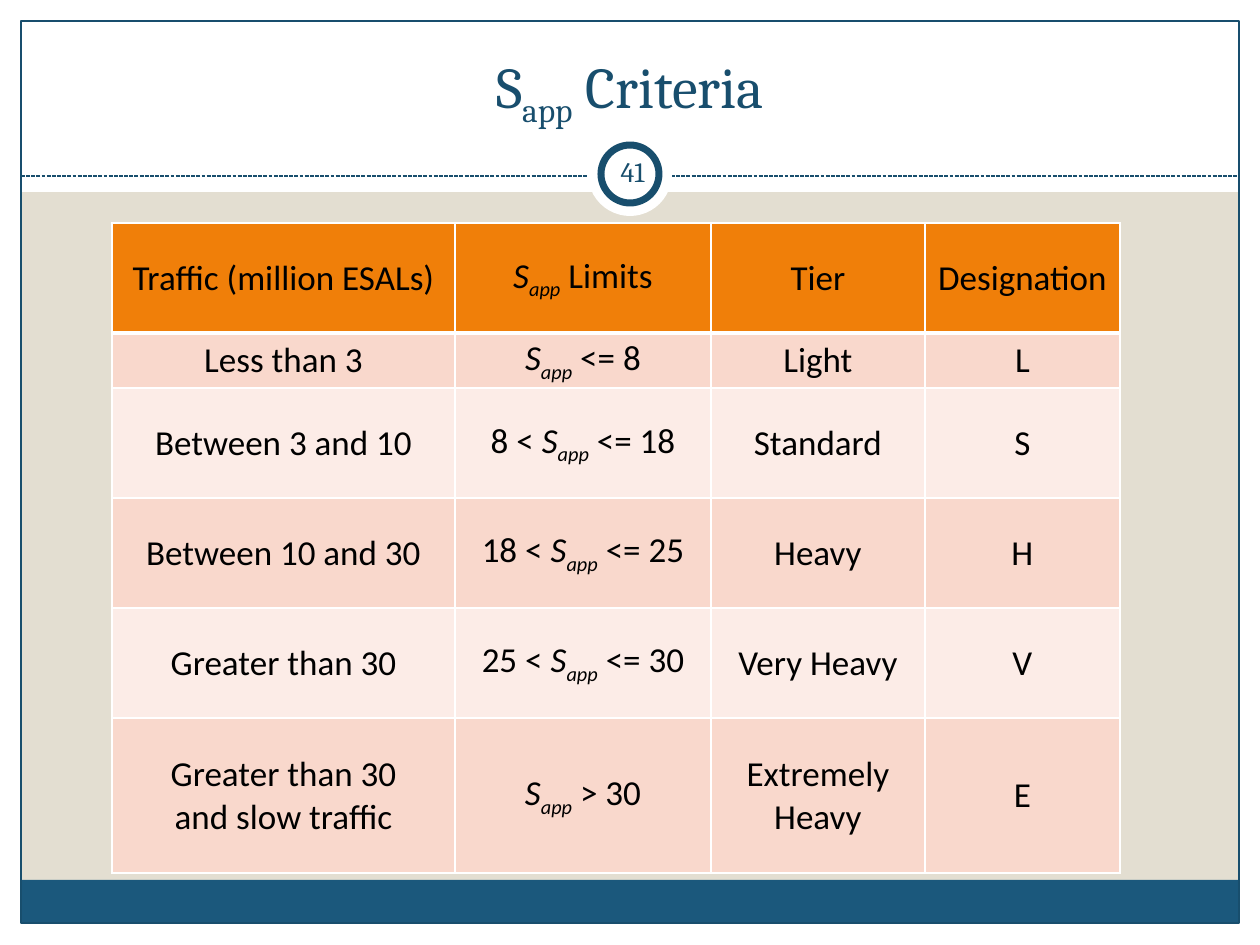
from lxml.etree import SubElement
from pptx import Presentation
from pptx.dml.color import RGBColor
from pptx.enum.dml import MSO_LINE
from pptx.enum.shapes import MSO_CONNECTOR, MSO_SHAPE
from pptx.enum.text import MSO_ANCHOR, PP_ALIGN
from pptx.oxml.ns import qn
from pptx.util import Emu, Pt

PX = 914400 // 126
WIDTH, HEIGHT = 1260, 945
MARGIN = 21
NAVY, BLUE, WHITE, BEIGE = "184E6D", "1B587C", "FFFFFF", "E3DED1"
ORANGE, ROSE, PALE = "F07F09", "F9D8CC", "FCECE7"

COL_WIDTHS = [343, 256, 214, 195]
ROW_HEIGHTS = [110, 55, 110, 110, 110, 155]
ROWS = [
    ["Traffic (million ESALs)", "S_app Limits", "Tier", "Designation"],
    ["Less than 3", "S_app <= 8", "Light", "L"],
    ["Between 3 and 10", "8 < S_app <= 18", "Standard", "S"],
    ["Between 10 and 30", "18 < S_app <= 25", "Heavy", "H"],
    ["Greater than 30", "25 < S_app <= 30", "Very Heavy", "V"],
    ["Greater than 30\nand slow traffic", "S_app > 30", "Extremely Heavy", "E"],
]


def px(*values):
    return [Emu(v * PX) for v in values]


def rgb(color):
    return RGBColor.from_string(color)


def add_box(slide, box, fill=None, line=None, width=0.75, kind=MSO_SHAPE.RECTANGLE):
    sp = slide.shapes.add_shape(kind, *px(*box))
    sp.shadow.inherit = False
    if fill:
        sp.fill.solid()
        sp.fill.fore_color.rgb = rgb(fill)
    else:
        sp.fill.background()
    if line:
        sp.line.color.rgb = rgb(line)
        sp.line.width = Pt(width)
    else:
        sp.line.fill.background()
    return sp


def write(tf, text, size, font, color, italic=False):
    """Fill tf with centred lines, setting the "app" of each S_app as a subscript."""
    tf.word_wrap = True
    for i, line in enumerate(text.split("\n")):
        p = tf.add_paragraph() if i else tf.paragraphs[0]
        p.alignment = PP_ALIGN.CENTER
        before, symbol, after = line.partition("S_app")
        pieces = [(before, False, False), (after, False, False)]
        if symbol:
            pieces[1:1] = [("S", italic, False), ("app", italic, True)]
        for piece, slanted, lowered in pieces:
            if not piece:
                continue
            r = p.add_run()
            r.text = piece
            r.font.size = Pt(size)
            r.font.name = font
            r.font.color.rgb = rgb(color)
            r.font.bold = False
            r.font.italic = slanted
            if lowered:
                r.font._element.set("baseline", "-25000")


def set_margins(target, left, top, right, bottom):
    (target.margin_left, target.margin_top,
     target.margin_right, target.margin_bottom) = px(left, top, right, bottom)


def add_frame(slide, left, top, width, height):
    right, bottom = left + width, top + height
    add_box(slide, (0, bottom, WIDTH, HEIGHT - bottom), WHITE)
    add_box(slide, (0, 0, WIDTH, 192), WHITE)
    add_box(slide, (0, 0, left, HEIGHT), WHITE)
    add_box(slide, (right, 0, WIDTH - right, HEIGHT), WHITE)
    add_box(slide, (left, bottom - 43, width, 43), BLUE)
    add_box(slide, (left, top, width, height), line=NAVY)
    rule_y = top + 155
    rule = slide.shapes.add_connector(
        MSO_CONNECTOR.STRAIGHT, *px(left, rule_y, right, rule_y))
    rule.line.color.rgb = rgb(NAVY)
    rule.line.width = Pt(0.75)
    rule.line.dash_style = MSO_LINE.SQUARE_DOT
    rule._element.spPr.append(rule._element.spPr.makeelement(qn("a:effectLst"), {}))


def add_title(slide, box, text):
    title = slide.shapes.title
    title.left, title.top, title.width, title.height = px(*box)
    title.text_frame.vertical_anchor = MSO_ANCHOR.BOTTOM
    write(title.text_frame, text, 33, "Cambria", NAVY)
    # Bring the title in front of the white band
    slide.shapes._spTree.append(title._element)


def add_page_badge(slide, left, top, size, number):
    inset = 13
    ring = size - 2 * inset
    add_box(slide, (left, top, size, size), WHITE, kind=MSO_SHAPE.OVAL)
    add_box(slide, (left + inset, top + inset, ring, ring), WHITE, NAVY, 4,
            MSO_SHAPE.OVAL)
    label = slide.shapes.add_textbox(*px(left + inset, top + 9, 63, 60))
    tf = label.text_frame
    tf.vertical_anchor = MSO_ANCHOR.MIDDLE
    set_margins(tf, 6, 6, 6, 6)
    write(tf, number, 16, "Cambria", NAVY)


def set_borders(cell, bottom_width):
    tc_pr = cell._tc.get_or_add_tcPr()
    for side, width in (("L", 1), ("R", 1), ("T", 1), ("B", bottom_width)):
        ln = SubElement(tc_pr, qn(f"a:ln{side}"), w=str(Pt(width)))
        fill = SubElement(ln, qn("a:solidFill"))
        SubElement(fill, qn("a:srgbClr"), val=WHITE)


def add_criteria_table(slide, left, top):
    box = px(left, top, sum(COL_WIDTHS), sum(ROW_HEIGHTS))
    table = slide.shapes.add_table(len(ROWS), len(COL_WIDTHS), *box).table
    for column, width in zip(table.columns, px(*COL_WIDTHS)):
        column.width = width
    for i, (row, height) in enumerate(zip(table.rows, px(*ROW_HEIGHTS))):
        row.height = height
        color = ORANGE if i == 0 else (PALE, ROSE)[i % 2]
        for cell, text in zip(row.cells, ROWS[i]):
            set_borders(cell, 3 if i == 0 else 1)
            cell.fill.solid()
            cell.fill.fore_color.rgb = rgb(color)
            cell.vertical_anchor = MSO_ANCHOR.MIDDLE
            set_margins(cell, 1, 1, 1, 0)
            write(cell.text_frame, text, 20, "Calibri", "000000", italic=True)


def main():
    prs = Presentation()
    prs.slide_width, prs.slide_height = px(WIDTH, HEIGHT)
    slide = prs.slides.add_slide(prs.slide_layouts[5])
    slide.background.fill.solid()
    slide.background.fill.fore_color.rgb = rgb(BEIGE)
    add_frame(slide, MARGIN, MARGIN, WIDTH - 2 * MARGIN, 902)
    badge = 84
    add_page_badge(slide, (WIDTH - badge) // 2, 132, badge, "41")
    add_title(slide, (42, 31, 1176, 105), "S_app Criteria")
    add_criteria_table(slide, 112, 223)
    prs.save("out.pptx")


if __name__ == "__main__":
    main()
